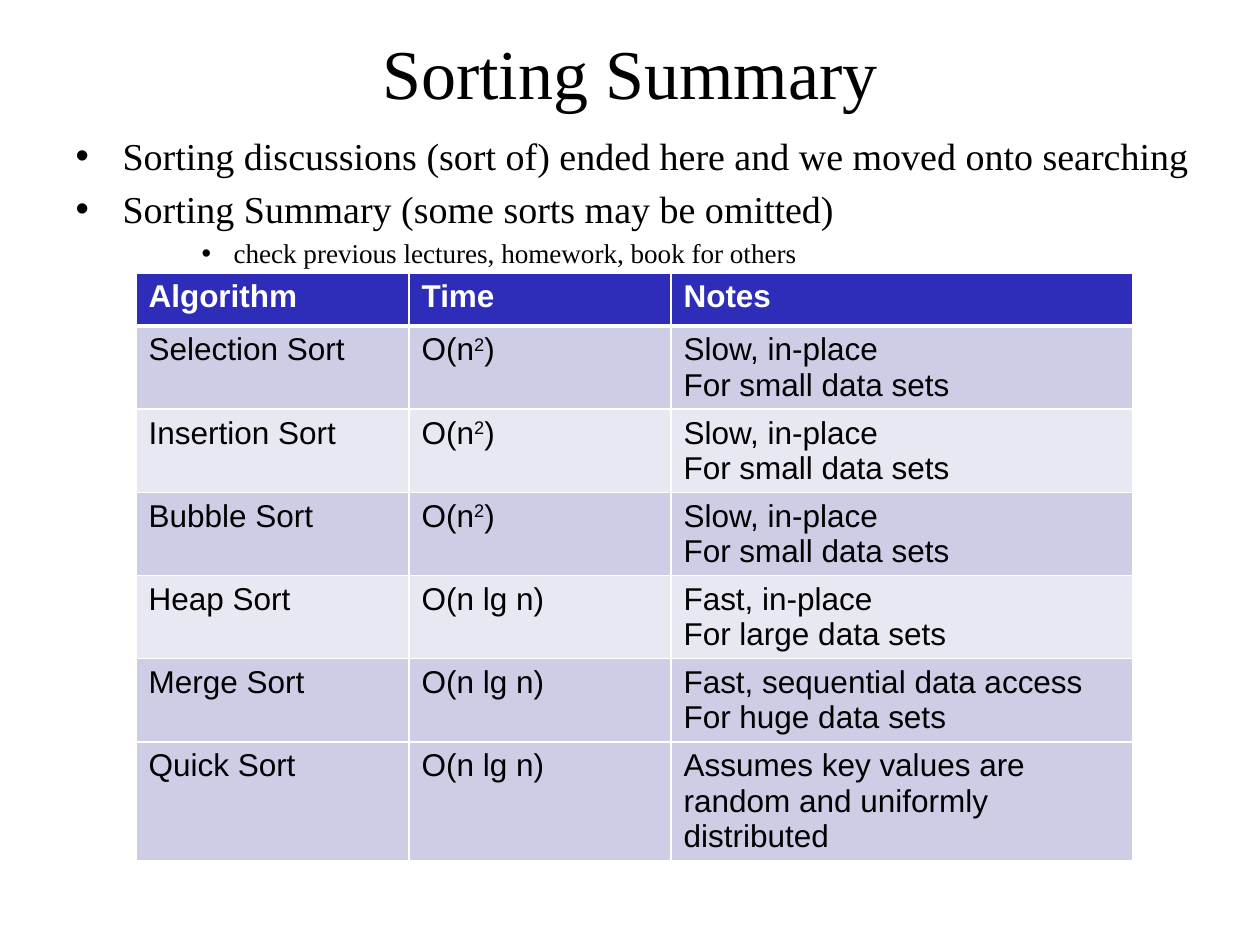
from lxml import etree
from pptx import Presentation
from pptx import util as u
from pptx.dml.color import RGBColor
from pptx.enum import text
from pptx.oxml import ns

PX = u.Inches(1) // 126  # one pixel in EMU

BLACK = RGBColor(0x00, 0x00, 0x00)
WHITE = RGBColor(0xFF, 0xFF, 0xFF)
HEADER_BLUE = RGBColor(0x2D, 0x2D, 0xB9)
BAND_DARK = RGBColor(0xCD, 0xCD, 0xE6)
BAND_LIGHT = RGBColor(0xE8, 0xE8, 0xF3)

SERIF = "Times New Roman"
SANS = "Arial"

# Bullet text, level, size, left indent and hanging indent in px
BULLETS = [
    ("Sorting discussions (sort of) ended here and we moved onto searching", 0, 21.7, 47, 47),
    ("Sorting Summary (some sorts may be omitted)", 0, 21.7, 47, 47),
    ("check previous lectures, homework, book for others", 2, 15.5, 158, 32),
]

# Each cell is a list of paragraphs, each paragraph a list of runs
QUADRATIC = [["O(n", "2", ")"]]
LINEARITHMIC = [["O(n lg n)"]]
SMALL_SETS = [["Slow, in-place"], ["For small data sets"]]
HEADER = [[["Algorithm"]], [["Time"]], [["Notes"]]]
ALGORITHMS = [
    [[["Selection Sort"]], QUADRATIC, SMALL_SETS],
    [[["Insertion Sort"]], QUADRATIC, SMALL_SETS],
    [[["Bubble Sort"]], QUADRATIC, SMALL_SETS],
    [[["Heap Sort"]], LINEARITHMIC, [["Fast, in-place"], ["For large data sets"]]],
    [[["Merge Sort"]], LINEARITHMIC,
     [["Fast, sequential data access"], ["For huge data sets"]]],
    [[["Quick Sort"]], LINEARITHMIC,
     [["Assumes key values are random and uniformly distributed"]]],
]
COLUMN_WIDTHS = [273, 262, 462]
ROW_HEIGHTS = [53, 74, 74, 74, 83, 83, 106]
BANDS = [HEADER_BLUE] + [BAND_DARK, BAND_LIGHT] * 2 + [BAND_DARK] * 2


def place(shape, left, top, width, height):
    shape.left, shape.top = left * PX, top * PX
    shape.width, shape.height = width * PX, height * PX


def add_run(paragraph, words, size, font, color, bold=False):
    run = paragraph.add_run()
    run.text = words
    run.font.size = u.Pt(size)
    run.font.name = font
    run.font.color.rgb = color
    run.font.bold = bold
    return run


def get_paragraph(frame, index):
    return frame.add_paragraph() if index else frame.paragraphs[0]


def fill_title(shape, words):
    place(shape, 63, 38, 1134, 67)
    frame = shape.text_frame
    frame.auto_size = text.MSO_AUTO_SIZE.NONE
    frame.vertical_anchor = text.MSO_ANCHOR.MIDDLE
    paragraph = frame.paragraphs[0]
    paragraph.alignment = text.PP_ALIGN.CENTER
    add_run(paragraph, words, 40, SERIF, BLACK)


def fill_bullets(shape, bullets):
    place(shape, 63, 126, 1166, 136)
    frame = shape.text_frame
    frame.auto_size = text.MSO_AUTO_SIZE.NONE
    frame.vertical_anchor = text.MSO_ANCHOR.TOP
    for index, (words, level, size, left, hanging) in enumerate(bullets):
        paragraph = get_paragraph(frame, index)
        paragraph.level = level
        paragraph.space_before = u.Pt(round(size * 0.2, 1))
        properties = paragraph._p.get_or_add_pPr()
        properties.set("marL", str(left * PX))
        properties.set("indent", str(-hanging * PX))
        etree.SubElement(properties, ns.qn("a:buChar"), char="•")
        add_run(paragraph, words, size, SERIF, BLACK)


def set_borders(cell, widths):
    """Draw white borders; widths maps a side (L, R, T, B) to points."""
    properties = cell._tc.get_or_add_tcPr()
    for index, side in enumerate("LRTB"):
        line = etree.Element(ns.qn(f"a:ln{side}"), w=str(u.Pt(widths[side])))
        fill = etree.SubElement(line, ns.qn("a:solidFill"))
        etree.SubElement(fill, ns.qn("a:srgbClr"), val=str(WHITE))
        properties.insert(index, line)


def fill_cell(cell, paragraphs, row):
    is_header = row == 0
    cell.fill.solid()
    cell.fill.fore_color.rgb = BANDS[row]
    # A thick line parts the header from the body
    set_borders(cell, {"L": 1, "R": 1, "T": 3 if row == 1 else 1, "B": 3 if is_header else 1})
    for index, runs in enumerate(paragraphs):
        paragraph = get_paragraph(cell.text_frame, index)
        for words in runs:
            run = add_run(paragraph, words, 18, SANS, WHITE if is_header else BLACK, is_header)
            if words == "2":
                run.font._element.set("baseline", "30000")


def add_sorting_table(slide, rows):
    frame = slide.shapes.add_table(
        len(rows), len(COLUMN_WIDTHS), 136 * PX, 273 * PX,
        sum(COLUMN_WIDTHS) * PX, sum(ROW_HEIGHTS) * PX)
    table = frame.table
    for column, width in zip(table.columns, COLUMN_WIDTHS):
        column.width = width * PX
    for row, height in zip(table.rows, ROW_HEIGHTS):
        row.height = height * PX
    for row, contents in enumerate(rows):
        for column, paragraphs in enumerate(contents):
            fill_cell(table.cell(row, column), paragraphs, row)


def main():
    presentation = Presentation()
    presentation.slide_width = 1260 * PX
    presentation.slide_height = 945 * PX
    slide = presentation.slides.add_slide(presentation.slide_layouts[1])
    slide.background.fill.solid()
    slide.background.fill.fore_color.rgb = WHITE

    # Heading and bullet list
    fill_title(slide.shapes.title, "Sorting Summary")
    fill_bullets(slide.placeholders[1], BULLETS)

    # Comparison of algorithms
    add_sorting_table(slide, [HEADER] + ALGORITHMS)

    presentation.save("out.pptx")


if __name__ == "__main__":
    main()
